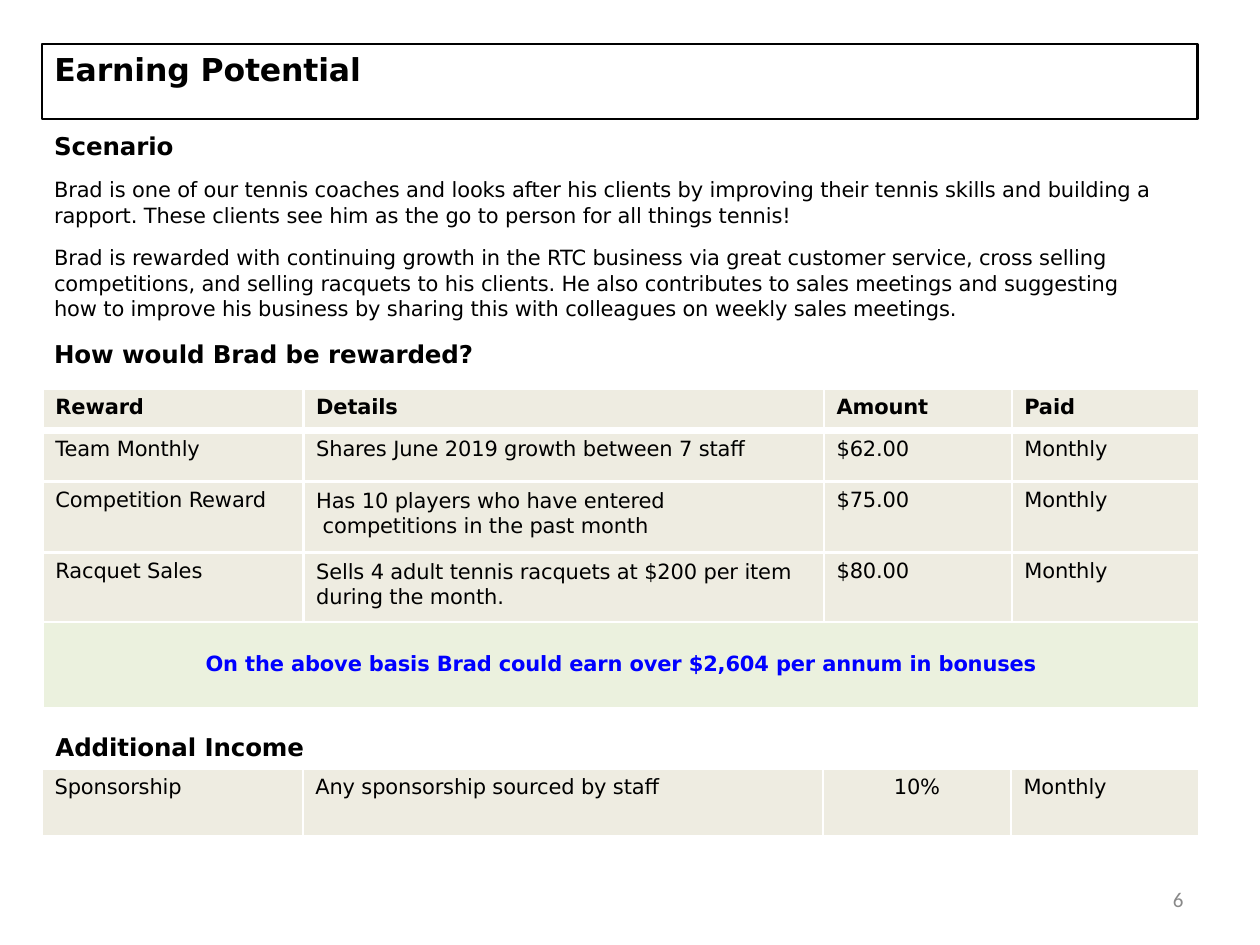
"""Build the Earning Potential slide."""
from dataclasses import dataclass

from lxml.etree import SubElement
from pptx import Presentation
from pptx.dml.color import RGBColor
from pptx.enum.shapes import MSO_SHAPE
from pptx.enum.text import MSO_ANCHOR, PP_ALIGN
from pptx.oxml.ns import qn
from pptx.util import Pt

BLACK = RGBColor(0x00, 0x00, 0x00)
BLUE = RGBColor(0x00, 0x00, 0xFF)
GREY = RGBColor(0x89, 0x89, 0x89)
WHITE = RGBColor(0xFF, 0xFF, 0xFF)
SAND = RGBColor(0xEE, 0xEC, 0xE1)
MINT = RGBColor(0xEB, 0xF1, 0xDE)

COLUMNS = (149, 297.4, 107.3, 107.3)
THIN, THICK = 1.5, 4.25


@dataclass(frozen=True)
class Para:
    text: str
    size: float = 12
    bold: bool = False
    color: RGBColor = BLACK
    font: str = "DejaVu Sans"
    before: float = 0
    spacing: float | None = None
    align: PP_ALIGN = PP_ALIGN.LEFT


@dataclass(frozen=True)
class Box:
    left: float
    top: float
    width: float
    height: float
    paras: tuple[Para, ...]
    inset_left: float = 0.7
    inset_top: float = 0.7
    outlined: bool = False


BOXES = (
    Box(667.4, 504.7, 14, 18, (Para("6", color=GREY, font="Calibri"),), 2.9, 2.1),
    Box(24, 25.2, 660.2, 42.8, (Para("Earning Potential", 18, True),), 7.2, 3.6, True),
    Box(30.2, 74.2, 641.5, 137.5, (
        Para("Scenario", 14, True),
        Para("Brad is one of our tennis coaches and looks after his clients by "
             "improving their tennis skills and building a rapport. These clients "
             "see him as the go to person for all things tennis!",
             before=8.4, spacing=1.05),
        Para("Brad is rewarded with continuing growth in the RTC business via great "
             "customer service, cross selling competitions, and selling racquets to "
             "his clients. He also contributes to sales meetings and suggesting\n"
             "how to improve his business by sharing this with colleagues on weekly "
             "sales meetings.", before=9.5, spacing=1.01),
        Para("How would Brad be rewarded?", 14, True, before=10.5),
    )),
    Box(31, 417.6, 160, 18.7, (Para("Additional Income", 14, True),)),
)

REWARDS = (
    ("Reward", "Details", "Amount", "Paid"),
    ("Team Monthly", "Shares June 2019 growth between 7 staff", "$62.00", "Monthly"),
    ("Competition Reward",
     "Has 10 players who have entered\n competitions in the past month",
     "$75.00", "Monthly"),
    ("Racquet Sales",
     "Sells 4 adult tennis racquets at $200 per item\nduring the month.",
     "$80.00", "Monthly"),
)
REWARD_HEIGHTS = (23.9, 29.2, 40.7, 39.8, 49)
SUMMARY = Para("On the above basis Brad could earn over $2,604 per annum in bonuses",
               bold=True, color=BLUE, align=PP_ALIGN.CENTER)
SPONSORSHIP = ("Sponsorship", "Any sponsorship sourced by staff", "10%", "Monthly")


def write(tf, paras: tuple[Para, ...]) -> None:
    """Fill a text frame with styled paragraphs."""
    for i, para in enumerate(paras):
        p = tf.add_paragraph() if i else tf.paragraphs[0]
        p.alignment = para.align
        if para.before:
            p.space_before = Pt(para.before)
        if para.spacing:
            p.line_spacing = (Pt(para.spacing) if para.spacing > 5 else para.spacing)
        for j, line in enumerate(para.text.split("\n")):
            if j:
                p.add_line_break()
            r = p.add_run()
            r.text = line
            r.font.size = Pt(para.size)
            r.font.bold = para.bold
            r.font.name = para.font
            r.font.color.rgb = para.color
            r.font._element.set("spc", "-8")


def draw_box(s, box: Box) -> None:
    """Draw a text box or an outlined title box."""
    area = [Pt(v) for v in (box.left, box.top, box.width, box.height)]
    if box.outlined:
        sp = s.shapes.add_shape(MSO_SHAPE.RECTANGLE, *area)
        sp.shadow.inherit = False
        sp.fill.background()
        sp.line.color.rgb = BLACK
        sp.line.width = Pt(THIN)
    else:
        sp = s.shapes.add_textbox(*area)
    tf = sp.text_frame
    tf.word_wrap = True
    tf.vertical_anchor = MSO_ANCHOR.TOP
    tf.margin_left, tf.margin_top = Pt(box.inset_left), Pt(box.inset_top)
    tf.margin_right = tf.margin_bottom = 0
    write(tf, box.paras)


def style_cell(cell, para: Para, left: float = 7.2, top: float = 3.6,
               fill: RGBColor = SAND, above: float = THIN, below: float = THIN) -> None:
    """Set the text, borders, margins and fill of a table cell."""
    cell.margin_left, cell.margin_top = Pt(left), Pt(top)
    cell.margin_right = cell.margin_bottom = 0
    tc_pr = cell._tc.get_or_add_tcPr()
    for side, width in (("L", THIN), ("R", THIN), ("T", above), ("B", below)):
        ln = SubElement(tc_pr, qn(f"a:ln{side}"), w=str(Pt(width)))
        SubElement(SubElement(ln, qn("a:solidFill")), qn("a:srgbClr"), val=str(WHITE))
    cell.fill.solid()
    cell.fill.fore_color.rgb = fill
    write(cell.text_frame, (para,))


def add_grid(s, left: float, top: float, heights: tuple[float, ...]):
    """Add an unstyled table with the shared column widths."""
    frame = s.shapes.add_table(len(heights), len(COLUMNS), Pt(left), Pt(top),
                               Pt(sum(COLUMNS)), Pt(sum(heights)))
    table = frame.table
    table.first_row = table.horz_banding = False
    for column, width in zip(table.columns, COLUMNS):
        column.width = Pt(width)
    for row, height in zip(table.rows, heights):
        row.height = Pt(height)
    return table


def draw_rewards(s) -> None:
    """Draw the rewards table with its merged summary row."""
    table = add_grid(s, 24.5, 222, REWARD_HEIGHTS)
    for i, row in enumerate(REWARDS):
        for j, text in enumerate(row):
            wrapped = "\n" in text
            style_cell(table.cell(i, j),
                       Para(text, bold=i == 0, spacing=14.2 if wrapped else None),
                       top=4.2 if wrapped else 3.6,
                       above=THICK if i == 1 else THIN,
                       below=THICK if i == 0 else THIN)
    last = len(REWARDS)
    summary = table.cell(last, 0)
    summary.merge(table.cell(last, len(COLUMNS) - 1))
    style_cell(summary, SUMMARY, left=0, top=17, fill=MINT)


def draw_sponsorship(s) -> None:
    """Draw the one-row additional income table."""
    table = add_grid(s, 24, 439.5, (39.5,))
    for j, text in enumerate(SPONSORSHIP):
        centred = text.endswith("%")
        style_cell(table.cell(0, j),
                   Para(text, align=PP_ALIGN.CENTER if centred else PP_ALIGN.LEFT),
                   left=0 if centred else 7.2, below=THICK)


def main() -> None:
    """Build and save the presentation."""
    prs = Presentation()
    prs.slide_width, prs.slide_height = Pt(720), Pt(540)
    s = prs.slides.add_slide(prs.slide_layouts[6])
    for box in BOXES:
        draw_box(s, box)
    draw_rewards(s)
    draw_sponsorship(s)
    prs.save("out.pptx")


if __name__ == "__main__":
    main()
